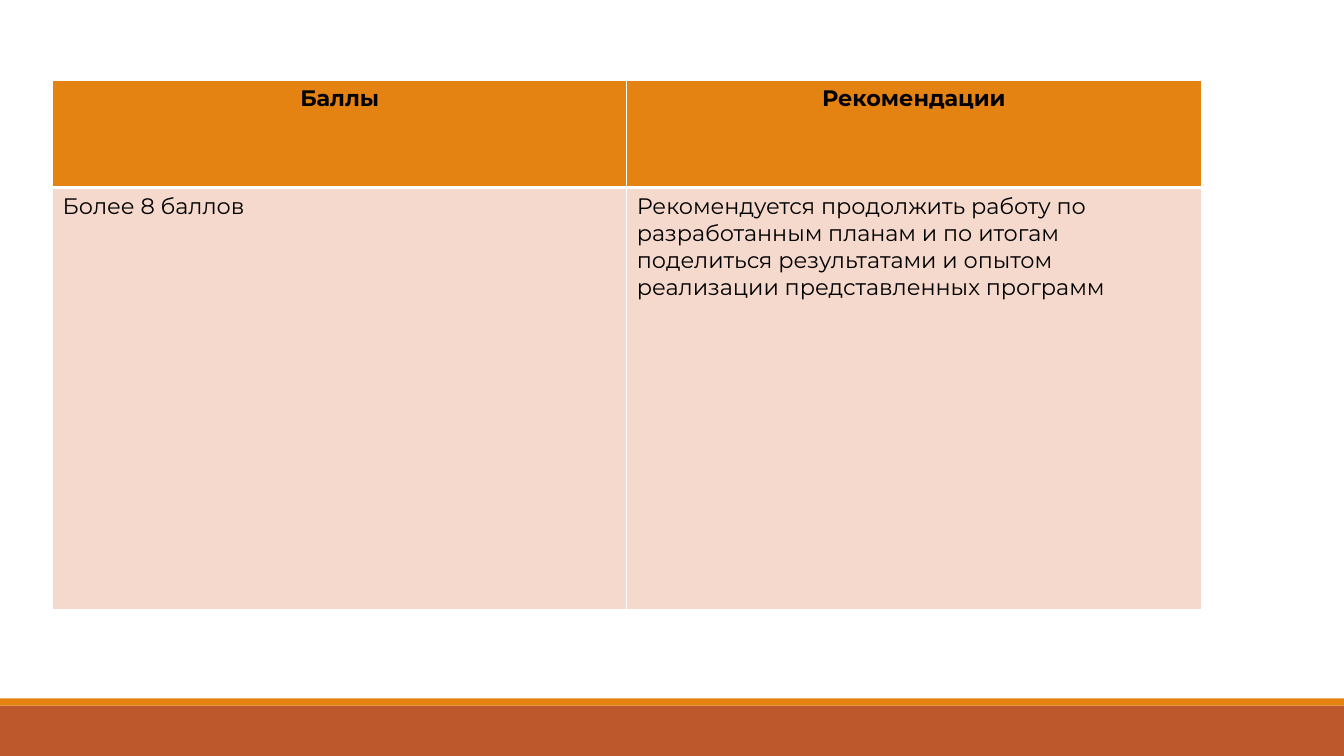
"""Builds a slide with a table of scores and recommendations above a two-colour footer."""
from dataclasses import dataclass

from lxml import etree
from pptx import Presentation
from pptx.dml.color import RGBColor
from pptx.enum.shapes import MSO_SHAPE
from pptx.enum.text import PP_ALIGN
from pptx.oxml.ns import qn
from pptx.util import Pt

RECT = MSO_SHAPE.RECTANGLE
LEFT, CENTER = PP_ALIGN.LEFT, PP_ALIGN.CENTER


@dataclass(frozen=True)
class Theme:
    font: str = "Montserrat"
    size: int = 16
    text: str = "000000"
    header: str = "E48312"
    body: str = "F5D9CC"
    footer: str = "BD582C"
    border: str = "FFFFFF"


theme = Theme()


def set_fill(obj, color):
    obj.fill.solid()
    obj.fill.fore_color.rgb = RGBColor.from_string(color)


def add_border(cell, side, width):
    ln = etree.SubElement(cell._tc.get_or_add_tcPr(), qn(f"a:ln{side}"), w=str(Pt(width)))
    fill = etree.SubElement(ln, qn("a:solidFill"))
    etree.SubElement(fill, qn("a:srgbClr"), val=theme.border)


prs = Presentation()
prs.slide_width, prs.slide_height = Pt(960), Pt(540)
s = prs.slides.add_slide(prs.slide_layouts[6])

for top, height, color in [(504, 36, theme.footer), (498.8, 5.2, theme.header)]:
    sp = s.shapes.add_shape(RECT, 0, Pt(top), prs.slide_width, Pt(height))
    sp.shadow.inherit = False
    set_fill(sp, color)
    sp.line.fill.background()

rows = [
    ("Баллы", "Рекомендации"),
    ("Более 8 баллов",
     "Рекомендуется продолжить работу по разработанным планам и по итогам "
     "поделиться результатами и опытом реализации представленных программ"),
]
row_heights = [76.8, 301.7]
row_styles = [(theme.header, CENTER, True, 1, 3), (theme.body, LEFT, False, 3, 1)]

table = s.shapes.add_table(2, 2, Pt(37.6), Pt(57.2), Pt(820.4), Pt(sum(row_heights))).table
for row, height, texts, style in zip(table.rows, row_heights, rows, row_styles):
    row.height = Pt(height)
    color, align, bold, top_width, bottom_width = style
    for cell, text in zip(row.cells, texts):
        for side, width in zip("LRTB", (1, 1, top_width, bottom_width)):
            add_border(cell, side, width)
        set_fill(cell, color)
        p = cell.text_frame.paragraphs[0]
        p.alignment = align
        r = p.add_run()
        r.text = text
        r.font.name = theme.font
        r.font.size = Pt(theme.size)
        r.font.bold = bold
        r.font.color.rgb = RGBColor.from_string(theme.text)

prs.save("out.pptx")
